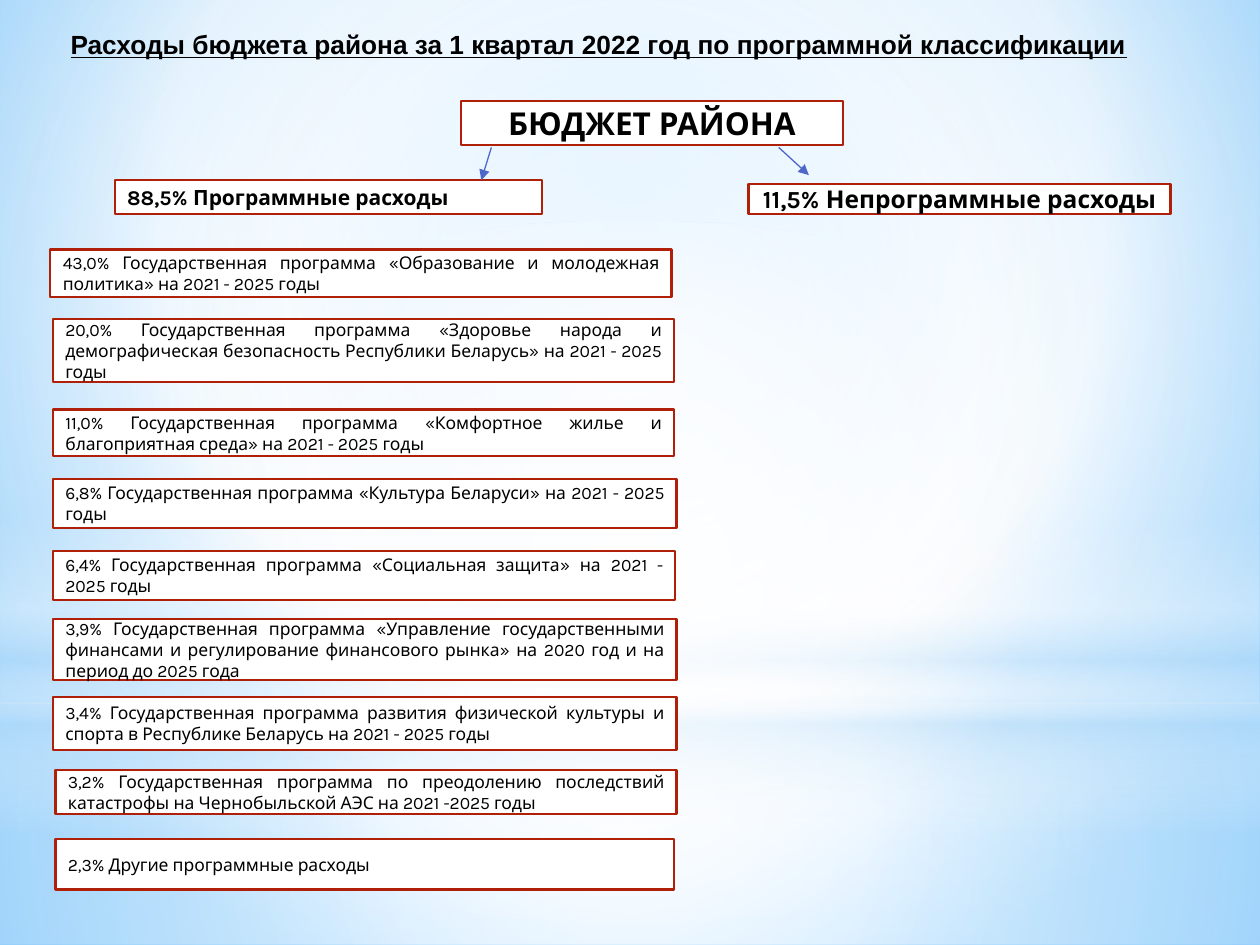
from lxml.etree import SubElement
from pptx import Presentation
from pptx.dml.color import RGBColor
from pptx.enum.shapes import MSO_CONNECTOR, MSO_SHAPE
from pptx.enum.text import MSO_ANCHOR, MSO_AUTO_SIZE, PP_ALIGN
from pptx.oxml.ns import qn
from pptx.util import Inches, Pt

BLACK = RGBColor(0x00, 0x00, 0x00)
WHITE = RGBColor(0xFF, 0xFF, 0xFF)
RED = RGBColor(0xB0, 0x1F, 0x07)
ARROW_BLUE = RGBColor(0x4E, 0x67, 0xC8)
SKY = RGBColor(0x9E, 0xD5, 0xFF)
DEEP_SKY = RGBColor(0x5B, 0xB9, 0xFF)
PALE_BLUE = RGBColor(0xB4, 0xDC, 0xFA)
CENTER = (50, 50, 50, 50)

# Bands of light: preset, box, stops (position, colour, opacity), focus
LIGHT_BANDS = [
    (MSO_SHAPE.RECTANGLE, (0, 5.58, 10, 1.92),
     [(0, WHITE, 91), (37, WHITE, 76), (100, PALE_BLUE, 79)], CENTER),
    (MSO_SHAPE.RECTANGLE, (0, 0, 10, 5.58),
     [(0, WHITE, 89), (48, WHITE, 62), (100, PALE_BLUE, 79)], CENTER),
    (MSO_SHAPE.RECTANGLE, (0, 4.12, 10, 2.5),
     [(0, WHITE, 0), (29, WHITE, 30), (45, PALE_BLUE, 40),
      (55, WHITE, 26), (65, PALE_BLUE, 60), (100, WHITE, 0)], None),
    (MSO_SHAPE.OVAL, (0, 1.75, 10, 5.58),
     [(0, WHITE, 100), (56, WHITE, 0)], CENTER),
]

PROGRAMS = [
    ((0.4, 1.98, 4.93, 0.38), "43,0% Государственная программа «Образование и "
     "молодежная политика» на 2021 - 2025 годы"),
    ((0.42, 2.53, 4.93, 0.5), "20,0% Государственная программа «Здоровье народа и "
     "демографическая безопасность Республики Беларусь» на 2021 - 2025 годы"),
    ((0.42, 3.25, 4.93, 0.37), "11,0% Государственная программа «Комфортное жилье и "
     "благоприятная среда» на 2021 - 2025 годы"),
    ((0.42, 3.8, 4.95, 0.39), "6,8% Государственная программа «Культура Беларуси» "
     "на 2021 - 2025 годы"),
    ((0.42, 4.37, 4.94, 0.39), "6,4% Государственная программа «Социальная защита» "
     "на 2021 - 2025 годы"),
    ((0.42, 4.91, 4.95, 0.49), "3,9% Государственная программа «Управление "
     "государственными финансами и регулирование финансового рынка» "
     "на 2020 год и на период до 2025 года"),
    ((0.42, 5.53, 4.95, 0.42), "3,4% Государственная программа развития физической "
     "культуры и спорта в Республике Беларусь на 2021 - 2025 годы"),
    ((0.44, 6.11, 4.93, 0.35), "3,2% Государственная программа по преодолению "
     "последствий катастрофы на Чернобыльской АЭС на 2021 -2025 годы"),
    ((0.44, 6.66, 4.91, 0.4), "2,3% Другие программные расходы"),
]


def set_gradient(fill, properties, stops, focus):
    """Radial gradient around the focus, or a vertical one without it."""
    fill.gradient()
    gradient = properties.find(qn("a:gradFill"))
    for child in list(gradient):
        gradient.remove(child)
    stop_list = SubElement(gradient, qn("a:gsLst"))
    for position, color, opacity in stops:
        stop = SubElement(stop_list, qn("a:gs"), pos=str(position * 1000))
        shade = SubElement(stop, qn("a:srgbClr"), val=str(color))
        if opacity < 100:
            SubElement(shade, qn("a:alpha"), val=str(opacity * 1000))
    if focus:
        circle = SubElement(gradient, qn("a:path"), path="circle")
        sides = {side: str(value * 1000) for side, value in zip("ltrb", focus)}
        SubElement(circle, qn("a:fillToRect"), **sides)
    else:
        SubElement(gradient, qn("a:lin"), ang="5400000", scaled="0")


def add_backdrop(slide):
    background = slide.background.fill
    background.solid()
    properties = slide.element.find(".//" + qn("p:bgPr"))
    set_gradient(background, properties,
                 [(0, SKY, 100), (60, WHITE, 100), (100, DEEP_SKY, 100)],
                 (20, 10, 20, 60))
    title = slide.shapes.title
    for preset, box, stops, focus in LIGHT_BANDS:
        band = slide.shapes.add_shape(preset, *map(Inches, box))
        band.shadow.inherit = False
        band.line.fill.background()
        set_gradient(band.fill, band.element.spPr, stops, focus)
        title.element.addprevious(band.element)  # keep the light behind the title


def format_font(paragraph, name, size, bold):
    font = paragraph.runs[0].font
    font.name, font.size, font.bold = name, Pt(size), bold
    font.color.rgb = BLACK


def place_title(title, box, text):
    title.left, title.top, title.width, title.height = map(Inches, box)
    frame = title.text_frame
    frame.text = text
    frame.word_wrap = True
    frame.auto_size = MSO_AUTO_SIZE.NONE
    frame.vertical_anchor = MSO_ANCHOR.MIDDLE
    frame.margin_left = Inches(0.16)
    heading = frame.paragraphs[0]
    heading.alignment = PP_ALIGN.LEFT
    format_font(heading, "Arial", 15, True)
    heading.runs[0].font.underline = True


def add_budget_box(slide, box, text, size=10, bold=False, align=PP_ALIGN.JUSTIFY):
    budget_box = slide.shapes.add_shape(MSO_SHAPE.RECTANGLE, *map(Inches, box))
    budget_box.shadow.inherit = False
    budget_box.fill.solid()
    budget_box.fill.fore_color.rgb = WHITE
    budget_box.line.color.rgb = RED
    budget_box.line.width = Pt(1.25)
    frame = budget_box.text_frame
    frame.text = text
    frame.word_wrap = True
    frame.vertical_anchor = MSO_ANCHOR.MIDDLE
    frame.paragraphs[0].alignment = align
    format_font(frame.paragraphs[0], "Karla", size, bold)


def add_arrow(slide, start, end):
    arrow = slide.shapes.add_connector(
        MSO_CONNECTOR.STRAIGHT, *map(Inches, start + end))
    arrow.line.color.rgb = ARROW_BLUE
    arrow.line.width = Pt(0.75)
    properties = arrow.element.spPr
    SubElement(properties.find(qn("a:ln")), qn("a:tailEnd"), type="triangle")
    SubElement(properties, qn("a:effectLst"))


def add_budget_split(slide):
    add_budget_box(slide, (3.66, 0.8, 3.03, 0.35), "БЮДЖЕТ РАЙОНА",
                   18, True, PP_ALIGN.CENTER)
    add_budget_box(slide, (0.91, 1.43, 3.39, 0.27), "88,5% Программные расходы",
                   12, True)
    add_budget_box(slide, (5.94, 1.46, 3.35, 0.24), "11,5% Непрограммные расходы",
                   14, True, PP_ALIGN.CENTER)
    add_arrow(slide, (3.9, 1.17), (3.82, 1.43))
    add_arrow(slide, (6.18, 1.17), (6.42, 1.39))


def main():
    presentation = Presentation()
    presentation.slide_width = Inches(10)
    presentation.slide_height = Inches(7.5)
    slide = presentation.slides.add_slide(presentation.slide_layouts[5])
    add_backdrop(slide)
    place_title(slide.shapes.title, (0.4, 0.15, 9.25, 0.4),
                "Расходы бюджета района за 1 квартал 2022 год "
                "по программной классификации")
    add_budget_split(slide)
    # State programmes by share of spending
    for box, text in PROGRAMS:
        add_budget_box(slide, box, text)
    presentation.save("out.pptx")


if __name__ == "__main__":
    main()
